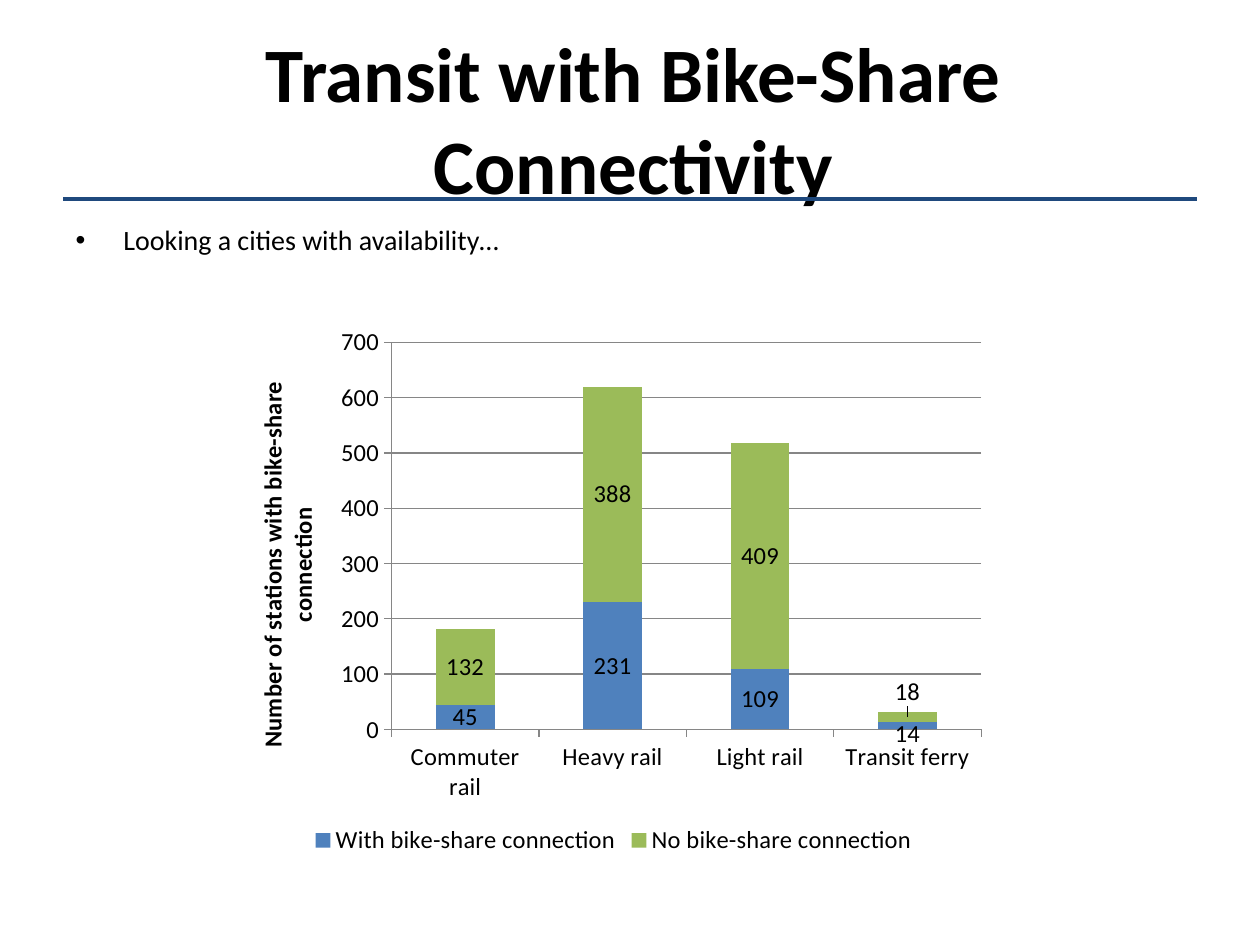
from lxml.etree import SubElement
from pptx import Presentation
from pptx.chart.data import CategoryChartData
from pptx.dml.color import RGBColor
from pptx.enum.chart import XL_CHART_TYPE, XL_LEGEND_POSITION, XL_TICK_MARK
from pptx.enum.shapes import MSO_CONNECTOR
from pptx.enum.text import MSO_ANCHOR, PP_ALIGN
from pptx.oxml import parse_xml
from pptx.oxml.ns import nsdecls, qn
from pptx.util import Inches, Pt

COLORS = {"text": "000000", "rule": "1F497D", "with": "4F81BD", "none": "9BBB59",
          "grid": "868686"}


def style(font, size, bold=False):
    font.name = "Calibri"
    font.size = Pt(size)
    font.bold = bold
    font.color.rgb = RGBColor.from_string(COLORS["text"])


def layout(**parts):
    """Return a manual chart layout, in fractions of the chart's size."""
    tags = "".join(f'<c:{tag} val="{val}"/>' for tag, val in parts.items())
    return parse_xml(f'<c:layout {nsdecls("c")}><c:manualLayout>{tags}'
                     '</c:manualLayout></c:layout>')


prs = Presentation()
prs.slide_width, prs.slide_height = Inches(10), Inches(7.5)
slide = prs.slides.add_slide(prs.slide_layouts[1])

# Rule under the title
rule = slide.shapes.add_connector(MSO_CONNECTOR.STRAIGHT, Inches(0.5), Inches(1.58),
                                  Inches(9.5), Inches(1.58))
rule.line.color.rgb = RGBColor.from_string(COLORS["rule"])
rule.line.width = Pt(2)
SubElement(rule._element.spPr, qn("a:effectLst"))

# Title
title = slide.shapes.title
title.left, title.top = Inches(0.53), Inches(0.31)
title.width, title.height = Inches(9), Inches(1.25)
title.text_frame.vertical_anchor = MSO_ANCHOR.MIDDLE
para = title.text_frame.paragraphs[0]
para.alignment = PP_ALIGN.CENTER
run = para.add_run()
run.text = "Transit with Bike-Share Connectivity"
style(run.font, 44, True)

# Bullet list
body = slide.placeholders[1]
body.left, body.top = Inches(0.5), Inches(1.75)
body.width, body.height = Inches(9), Inches(4.95)
para = body.text_frame.paragraphs[0]
props = para._p.get_or_add_pPr()
props.set("marL", str(Inches(0.38)))
props.set("indent", str(-Inches(0.38)))
SubElement(props, qn("a:buChar"), char="•")
para.line_spacing = 0.9
para.space_before = Pt(0)
run = para.add_run()
run.text = "Looking a cities with availability…"
style(run.font, 16)

# Stacked columns
data = CategoryChartData()
data.categories = ["Commuter rail", "Heavy rail", "Light rail", "Transit ferry"]
data.add_series("With bike-share connection", [45, 231, 109, 14])
data.add_series("No bike-share connection", [137, 388, 409, 18])
chart = slide.shapes.add_chart(XL_CHART_TYPE.COLUMN_STACKED, Inches(1.83), Inches(2.5),
                               Inches(6.08), Inches(4.33), data).chart
style(chart.font, 14)
chart.has_title = False
chart.has_legend = True
chart.legend.position = XL_LEGEND_POSITION.BOTTOM
chart.legend.include_in_layout = False
style(chart.legend.font, 14)

plot = chart.plots[0]
plot.gap_width, plot.overlap = 150, 100
plot.vary_by_categories = False
area = chart._chartSpace.chart.plotArea
for old in area.findall(qn("c:layout")):
    area.remove(old)
area.insert(0, layout(layoutTarget="inner", xMode="edge", yMode="edge",
                      x=0.21, y=0.05, w=0.77, h=0.71))

for axis in (chart.category_axis, chart.value_axis):
    axis.major_tick_mark = XL_TICK_MARK.OUTSIDE
    axis.minor_tick_mark = XL_TICK_MARK.NONE
    axis.format.line.color.rgb = RGBColor.from_string(COLORS["grid"])
    style(axis.tick_labels.font, 14)
scale = chart.value_axis
scale.minimum_scale, scale.maximum_scale, scale.major_unit = 0, 700, 100
scale.tick_labels.number_format = "#,##0"
scale.tick_labels.number_format_is_linked = False
scale.has_major_gridlines = True
scale.major_gridlines.format.line.color.rgb = RGBColor.from_string(COLORS["grid"])
run = scale.axis_title.text_frame.paragraphs[0].add_run()
run.text = "Number of stations with bike-share connection"
style(run.font, 14, True)

# Value labels; those of the small ferry column are moved off the bars
for series, color, shift in zip(plot.series, ("with", "none"), (0.015, -0.046)):
    series.format.fill.solid()
    series.format.fill.fore_color.rgb = RGBColor.from_string(COLORS[color])
    labels = series.data_labels
    labels.show_value = True
    style(labels.font, 14)
    style(series.points[3].data_label.font, 14)
    index = labels._element.xpath('c:dLbl/c:idx[@val="3"]')[0]
    index.addnext(layout(x=0, y=shift))

# The commuter rail label reads 132, while its bar is drawn at 137
run = plot.series[1].points[0].data_label.text_frame.paragraphs[0].add_run()
run.text = "132"
style(run.font, 14)

prs.save("out.pptx")
